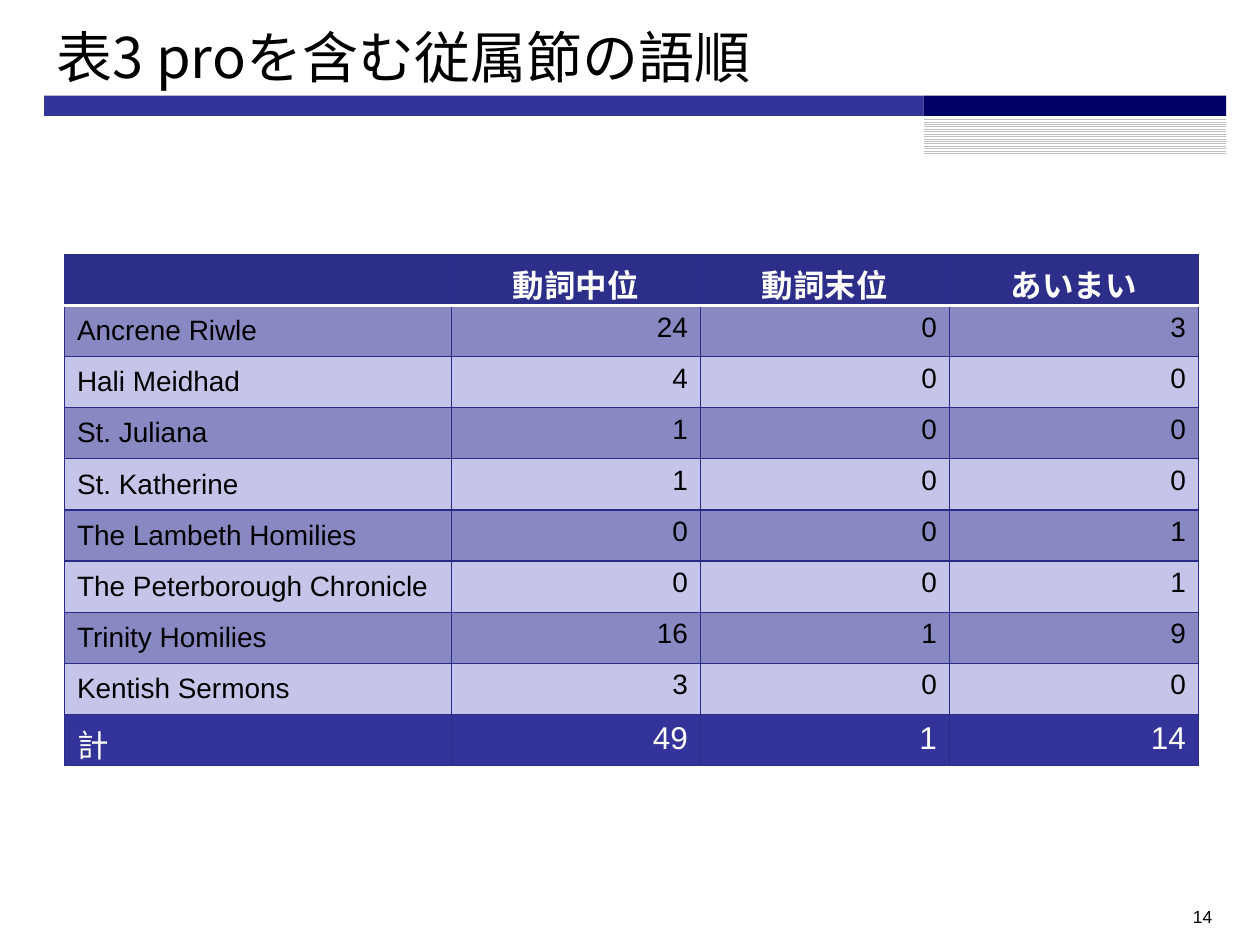
from lxml.etree import SubElement
from pptx import Presentation
from pptx.dml.color import RGBColor
from pptx.enum.dml import MSO_PATTERN
from pptx.enum.shapes import MSO_SHAPE as Shape
from pptx.enum.text import MSO_ANCHOR as Anchor, PP_ALIGN as Align
from pptx.oxml import parse_xml
from pptx.oxml.ns import nsdecls, qn
from pptx.util import Cm, Pt

COLORS = {
    "bar": "333399", "accent": "000066", "hatch": "C0C0C0", "white": "FFFFFF",
    "black": "000000", "header": "2D2D8A", "grid": "2A2A89",
    "odd": "8888C3", "even": "C5C5E9",
}
LATIN, CJK = "Arial", "Noto Sans CJK JP"

HEADERS = ["", "動詞中位", "動詞末位", "あいまい"]
TEXTS = [
    ("Ancrene Riwle", 24, 0, 3),
    ("Hali Meidhad", 4, 0, 0),
    ("St. Juliana", 1, 0, 0),
    ("St. Katherine", 1, 0, 0),
    ("The Lambeth Homilies", 0, 0, 1),
    ("The Peterborough Chronicle", 0, 0, 1),
    ("Trinity Homilies", 16, 1, 9),
    ("Kentish Sermons", 3, 0, 0),
]
TOTAL = ("計", 49, 1, 14)


def rgb(name):
    return RGBColor.from_string(COLORS[name])


def write(tf, text, size=16, color="black", bold=False, align=Align.LEFT, font=LATIN):
    p = tf.paragraphs[0]
    p.alignment = align
    r = p.add_run()
    r.text = str(text)
    r.font.size, r.font.bold, r.font.name = Pt(size), bold, font
    r.font.color.rgb = rgb(color)
    SubElement(r.font._element, qn("a:ea")).set("typeface", CJK)


class Deck:
    def __init__(self, prs):
        self.s = prs.slides.add_slide(prs.slide_layouts[6])

    def rect(self, x, y, w, h, color, hatched=False):
        sp = self.s.shapes.add_shape(Shape.RECTANGLE, Cm(x), Cm(y), Cm(w), Cm(h))
        sp.shadow.inherit = False
        sp.line.fill.background()
        if hatched:
            sp.fill.patterned()
            sp.fill.pattern = MSO_PATTERN.LIGHT_HORIZONTAL
            sp.fill.fore_color.rgb, sp.fill.back_color.rgb = rgb(color), rgb("white")
        else:
            sp.fill.solid()
            sp.fill.fore_color.rgb = rgb(color)

    def text(self, x, y, w, h, text, anchor=Anchor.TOP, **style):
        tf = self.s.shapes.add_textbox(Cm(x), Cm(y), Cm(w), Cm(h)).text_frame
        tf.word_wrap = True
        tf.vertical_anchor = anchor
        write(tf, text, **style)

    def table(self, x, y, widths, row_height, rows):
        frame = self.s.shapes.add_table(len(rows), len(widths), Cm(x), Cm(y),
                                        Cm(sum(widths)), Cm(row_height * len(rows)))
        for column, width in zip(frame.table.columns, widths):
            column.width = Cm(width)
        for i, values in enumerate(rows):
            for j, value in enumerate(values):
                self.cell(frame.table.cell(i, j), value, i, j, len(rows) - 1)

    def cell(self, cell, value, i, j, last):
        header, total = i == 0, i == last
        body = not (header or total)
        fill = "header" if header else "bar" if total else "odd" if i % 2 else "even"
        cell.fill.solid()
        cell.fill.fore_color.rgb = rgb(fill)
        cell.vertical_anchor = Anchor.MIDDLE if body and j == 0 else Anchor.TOP
        if value != "":
            align = Align.CENTER if header else Align.RIGHT if j else Align.LEFT
            write(cell.text_frame, value, size=16 if body else 18,
                  color="black" if body else "white", bold=header, align=align)
        # White rule under the header, thin grid elsewhere
        white_side = {0: "B", 1: "T"}.get(i)
        for k, side in enumerate("LRTB"):
            color, width = ("white", 2) if side == white_side else ("grid", 0.75)
            cell._tc.get_or_add_tcPr().insert(k, parse_xml(
                f'<a:ln{side} {nsdecls("a")} w="{Pt(width)}"><a:solidFill>'
                f'<a:srgbClr val="{COLORS[color]}"/></a:solidFill></a:ln{side}>'))


def main():
    prs = Presentation()
    prs.slide_width, prs.slide_height = Cm(25.4), Cm(19.05)
    deck = Deck(prs)

    # Bars under the title
    deck.rect(0.89, 1.93, 17.73, 0.41, "bar")
    deck.rect(18.62, 2.36, 6.1, 0.76, "hatch", hatched=True)
    deck.rect(18.62, 1.93, 6.1, 0.41, "accent")

    # Title and slide number
    deck.text(0.89, 0.33, 23.83, 1.6, "表3 proを含む従属節の語順",
              anchor=Anchor.MIDDLE, size=32, font=CJK)
    deck.text(18.77, 18.14, 5.92, 0.74, "14", size=10, align=Align.RIGHT)

    # Word order counts
    deck.table(1.3, 5.13, [7.8] + [5.02] * 3, 1.03, [HEADERS, *TEXTS, TOTAL])

    prs.save("out.pptx")


if __name__ == "__main__":
    main()
